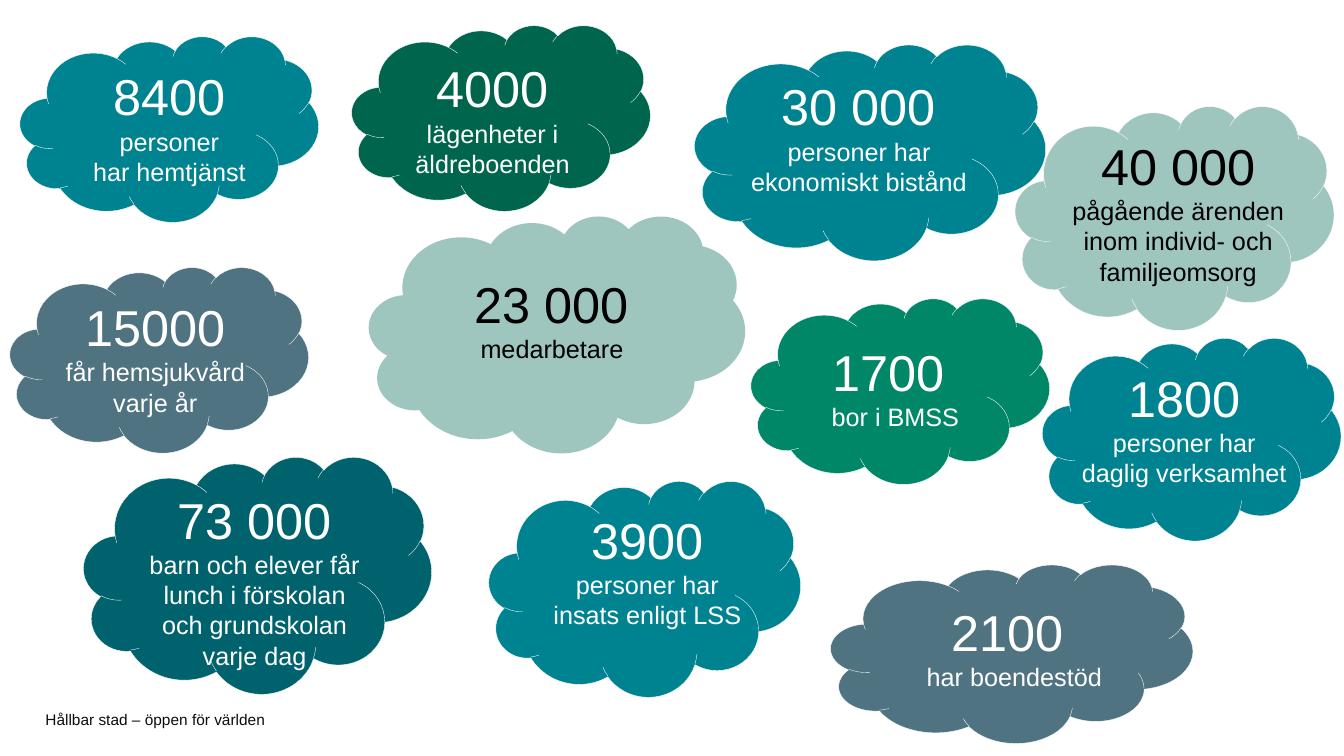
"""Build a slide of clouds with key figures about a city's social services."""
import pptx
import pptx.dml.color
import pptx.enum.shapes
import pptx.enum.text
import pptx.util

Inches = pptx.util.Inches
Pt = pptx.util.Pt
TEAL, MINT, SLATE = "008391", "9FC5BF", "507382"
WHITE, BLACK = "FFFFFF", "000000"

FIGURES = [
    ("8400\vpersoner\vhar hemtjänst", TEAL, WHITE,
     (0.2, 0.36, 2.96, 1.84), (0.74, 0.6, 1.88, 1.31)),
    ("3900\vpersoner har insats enligt LSS", TEAL, WHITE,
     (4.85, 4.77, 3.09, 2.14), (5.36, 5, 2.12, 1.31)),
    ("30 000\vpersoner har ekonomiskt bistånd", TEAL, WHITE,
     (6.89, 0.44, 3.48, 2.14), (7.2, 0.7, 2.64, 1.31)),
    ("40 000\vpågående ärenden inom individ- och familjeomsorg", MINT, BLACK,
     (10.07, 1.05, 3.16, 2.22), (10.53, 1.29, 2.31, 1.62)),
    ("73 000\vbarn och elever får lunch i förskolan och grundskolan varje dag",
     "00626D", WHITE, (0.83, 4.53, 3.45, 2.35), (1.34, 4.8, 2.37, 1.92)),
    ("23 000\vmedarbetare", MINT, BLACK,
     (3.66, 2.14, 3.73, 2.35), (4.49, 2.66, 1.97, 1.01)),
    ("15000\vfår hemsjukvård varje år", SLATE, WHITE,
     (0.1, 2.65, 2.96, 1.84), (0.46, 2.89, 2.16, 1.31)),
    ("1800\vpersoner har\ndaglig verksamhet", TEAL, WHITE,
     (10.34, 3.35, 2.96, 2.01), (10.37, 3.59, 2.75, 1.31)),
    ("1700 \nbor i BMSS", "008767", WHITE,
     (7.45, 2.96, 2.96, 1.84), (7.94, 3.33, 1.88, 1.01)),
    ("4000\vlägenheter i äldreboenden", "00654D", WHITE,
     (3.49, 0.25, 2.96, 1.84), (3.81, 0.52, 2.15, 1.31)),
    ("2100 \nhar boendestöd", SLATE, WHITE,
     (8.24, 5.6, 3.59, 1.77), (8.83, 5.91, 2.46, 1.01)),
]
UNLINED = "23 000"
FILLED = "2100"


def colour(value):
    return pptx.dml.color.RGBColor.from_string(value)


class Page:
    def __init__(self, deck):
        self.font = "Arial"
        self.number_size = 36
        self.caption_size = 18
        self.slide = deck.slides.add_slide(deck.slide_layouts[6])

    def cloud(self, place, fill, lined):
        shape = self.slide.shapes.add_shape(
            pptx.enum.shapes.MSO_SHAPE.CLOUD, *map(Inches, place))
        shape.shadow.inherit = False
        shape.fill.solid()
        shape.fill.fore_color.rgb = colour(fill)
        if lined:
            shape.line.color.rgb = colour(WHITE)
            shape.line.width = Pt(0.25)
        else:
            shape.line.fill.background()

    def span(self, para, text, size, ink):
        span = para.add_run()
        span.text = text
        style = {"name": self.font, "size": Pt(size)}
        for name, value in style.items():
            setattr(span.font, name, value)
        span.font.color.rgb = colour(ink)

    def text_box(self, place, settings):
        box = self.slide.shapes.add_textbox(*map(Inches, place))
        for name, value in settings.items():
            setattr(box.text_frame, name, value)
        return box

    def figure(self, text, place, ink, fill=None):
        box = self.text_box(place, {
            "word_wrap": True,
            "auto_size": pptx.enum.text.MSO_AUTO_SIZE.SHAPE_TO_FIT_TEXT})
        if fill:
            box.fill.solid()
            box.fill.fore_color.rgb = colour(fill)
        size = self.number_size
        for index, block in enumerate(text.split("\n")):
            frame = box.text_frame
            para = frame.add_paragraph() if index else frame.paragraphs[0]
            para.alignment = pptx.enum.text.PP_ALIGN.CENTER
            for row, line in enumerate(block.split("\v")):
                if row:
                    para.add_line_break()
                self.span(para, line, size, ink)
                size = self.caption_size

    def footer(self, text, place):
        box = self.text_box(place, {
            "word_wrap": True, "margin_left": 0, "margin_top": 0,
            "margin_right": 0, "margin_bottom": 0,
            "vertical_anchor": pptx.enum.text.MSO_ANCHOR.MIDDLE})
        self.span(box.text_frame.paragraphs[0], text, 11, "0D0D0D")


def main():
    deck = pptx.Presentation()
    deck.slide_width, deck.slide_height = Inches(13.33), Inches(7.5)
    page = Page(deck)
    page.footer("Hållbar stad – öppen för världen", (0.45, 7.06, 9.45, 0.16))
    for text, fill, ink, cloud_place, text_place in FIGURES:
        page.cloud(cloud_place, fill, not text.startswith(UNLINED))
        page.figure(text, text_place, ink, fill if text.startswith(FILLED) else None)
    deck.save("out.pptx")


if __name__ == "__main__":
    main()
